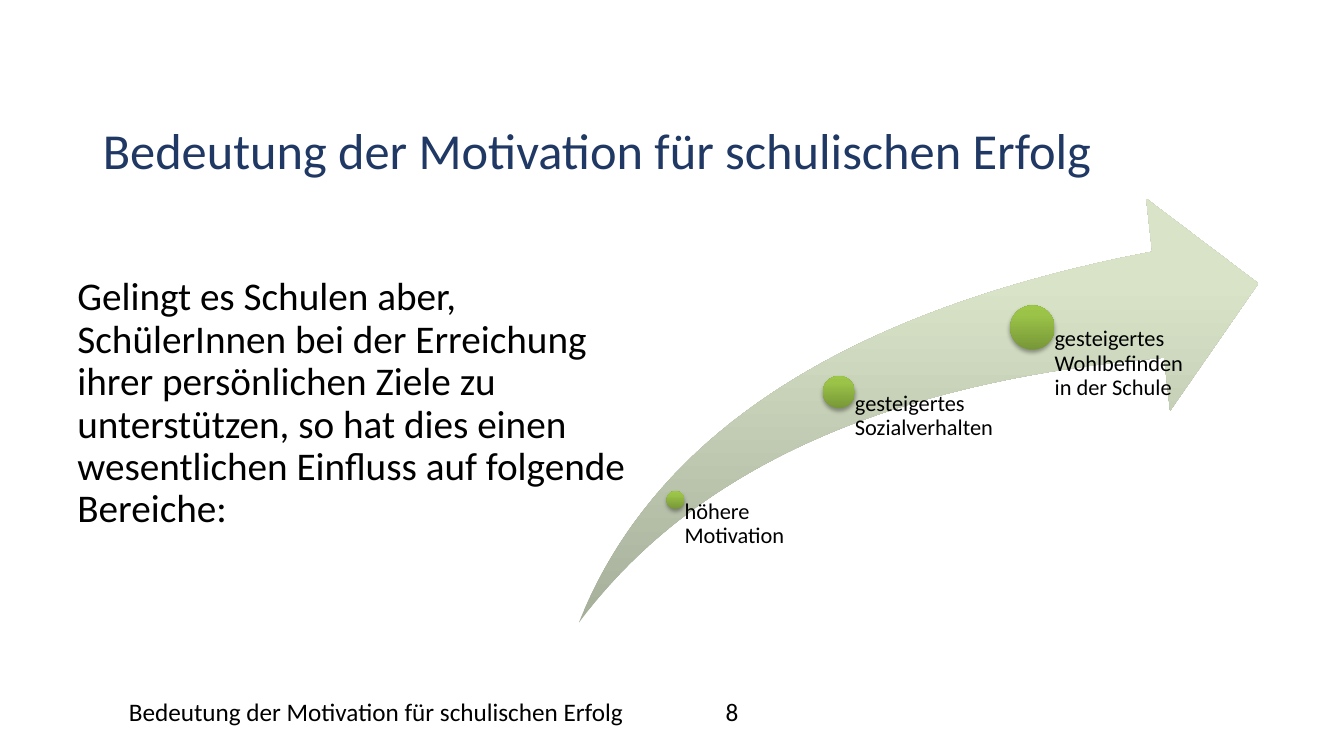
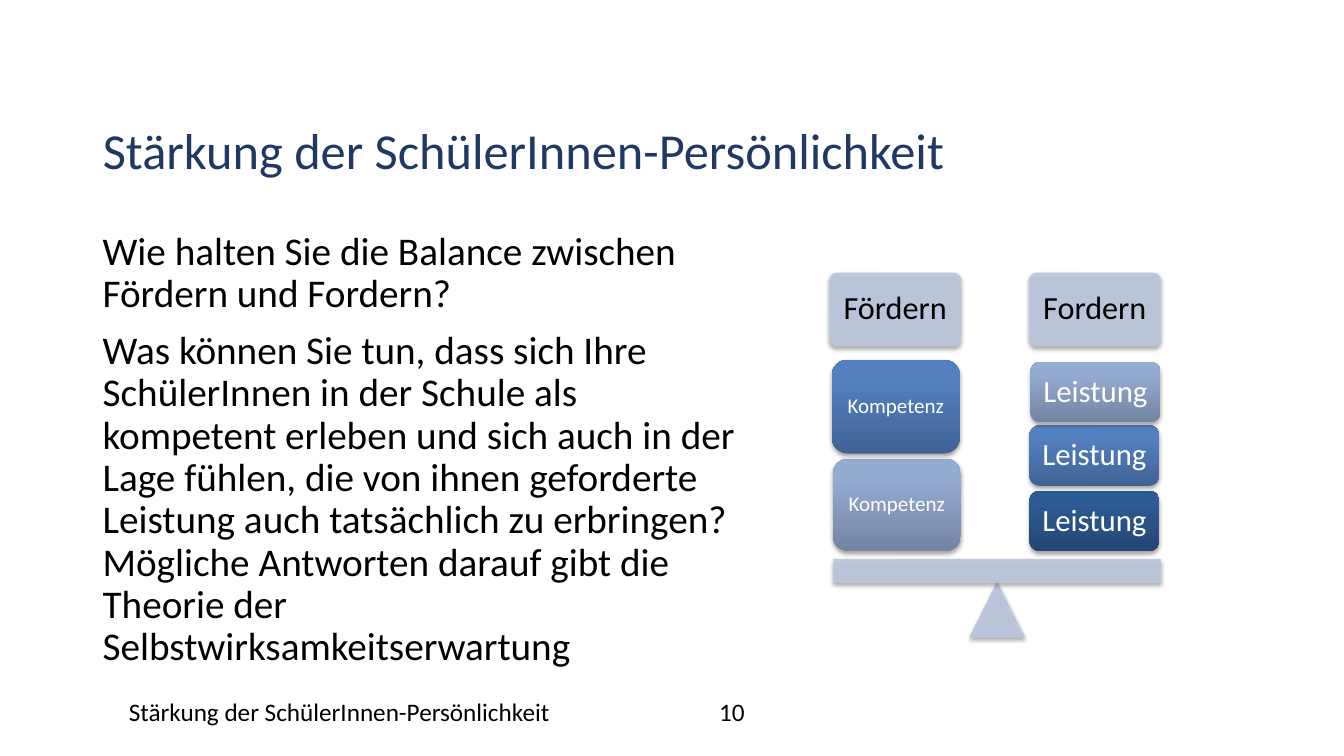
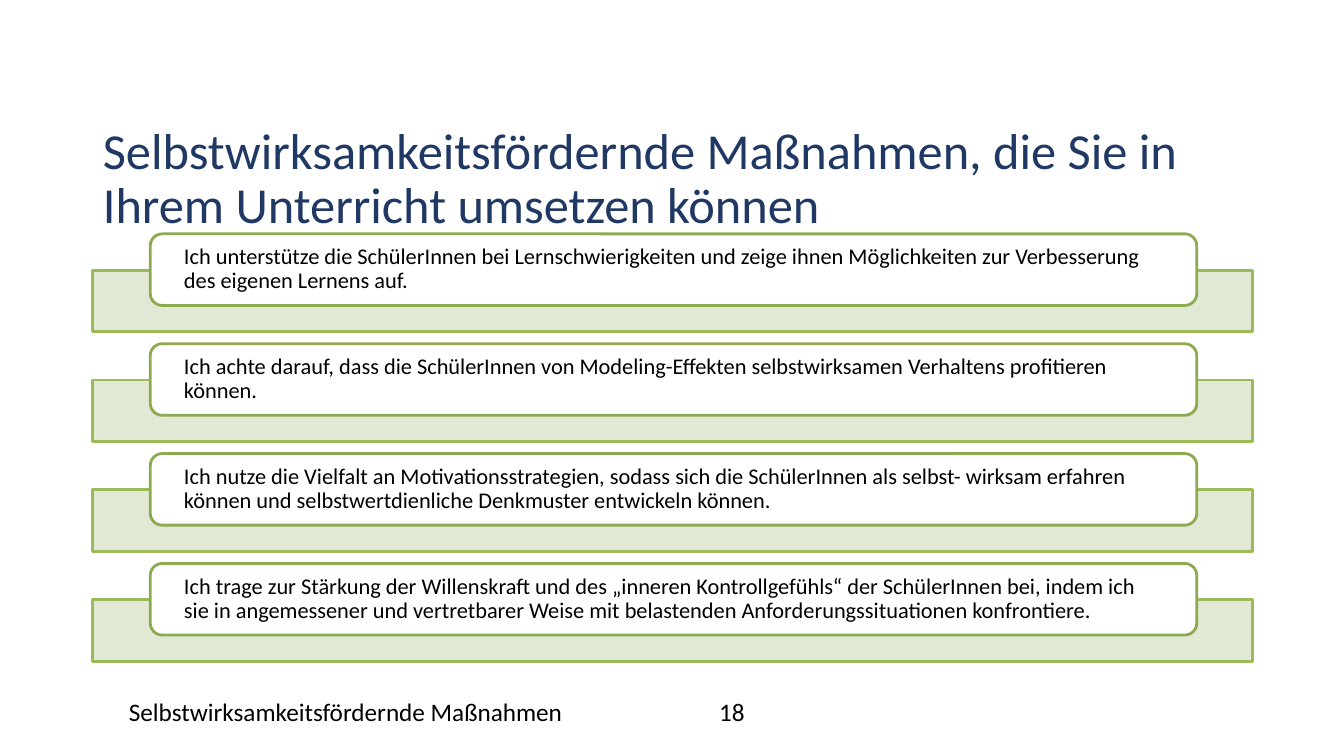
import copy
from dataclasses import dataclass
from typing import Any, Optional

import lxml.etree
import pptx
import pptx.dml.color
import pptx.enum.shapes
import pptx.enum.text
import pptx.oxml.ns
import pptx.util

Inches = pptx.util.Inches
Pt = pptx.util.Pt
KIND = pptx.enum.shapes.MSO_SHAPE
ALIGN = pptx.enum.text.PP_ALIGN
ANCHOR = pptx.enum.text.MSO_ANCHOR
qn = pptx.oxml.ns.qn

# Shared look
FONT = "Calibri"
BLACK, WHITE, NAVY = "000000", "FFFFFF", "203864"
PALE, MINT, LIME, OLIVE = "BBC7DE", "DEE7D1", "9BBB59", "8DAA51"
STOPS = (0, 0.8, 1)
SWOOSH = ("A6AF9A", "D8E3C8", "D9E4C8")
GREEN = ("779737", "9BC348", "9DC746")
DEEP = ("234671", "2D5B93", "2B5C96")
BLUE = ("406394", "5480C0", "5281C3")
STEEL = ("7284A2", "94ABD2", "94ACD4")


@dataclass
class Area:
    left: float
    top: float
    width: float
    height: float

    def emu(self) -> tuple:
        return tuple(map(Inches, (self.left, self.top, self.width, self.height)))


@dataclass
class Dot:
    x: float
    y: float
    size: float
    width: float
    text: str


@dataclass
class Block:
    area: Area
    text: str
    points: float
    paint: tuple


def tint(text: str) -> pptx.dml.color.RGBColor:
    return pptx.dml.color.RGBColor.from_string(text)


def write(frame: Any, text: str, *, size: float, color: str = BLACK,
          align: Any = ALIGN.LEFT, anchor: Any = ANCHOR.TOP,
          inset: tuple = (0.1, 0.05, 0.1, 0.05), lead: float = 0.9,
          gap: float = 0) -> None:
    """Fill a text frame, one paragraph per line of text."""
    frame.word_wrap = True
    frame.auto_size = pptx.enum.text.MSO_AUTO_SIZE.NONE
    frame.vertical_anchor = anchor
    (frame.margin_left, frame.margin_top,
     frame.margin_right, frame.margin_bottom) = map(Inches, inset)
    for i, line in enumerate(text.split("\n")):
        para = frame.add_paragraph() if i else frame.paragraphs[0]
        para.text = line
        para.alignment = align
        para.line_spacing = lead
        para.space_before = Pt(gap if i else 0)
        para.font.name = FONT
        para.font.size = Pt(size)
        para.font.color.rgb = tint(color)


def label(slide: Any, area: Area, text: str, **look: Any) -> None:
    write(slide.shapes.add_textbox(*area.emu()).text_frame, text, **look)


def fade(fill: Any, alpha: int) -> None:
    """Set the opacity of each solid colour inside an element."""
    for color in fill.iter(qn("a:srgbClr")):
        lxml.etree.SubElement(color, qn("a:alpha"), val=str(alpha * 1000))


def shade(shape: Any, paint: tuple) -> None:
    """Three-stop gradient that runs from bottom to top."""
    shape.fill.gradient()
    shape.fill.gradient_angle = 90
    stops = shape._element.spPr.find(".//" + qn("a:gsLst"))
    stops.append(copy.deepcopy(stops[-1]))
    for stop, color, spot in zip(shape.fill.gradient_stops, paint, STOPS):
        stop.color.rgb = tint(color)
        stop.position = spot


def lift(shape: Any) -> None:
    """Add a soft shadow just below the shape."""
    effects = shape._element.spPr.find(qn("a:effectLst"))
    outer = lxml.etree.SubElement(
        effects, qn("a:outerShdw"), blurRad=str(Pt(3.1)), dist=str(Pt(1.8)),
        dir="5400000", rotWithShape="0")
    lxml.etree.SubElement(outer, qn("a:srgbClr"), val=BLACK)
    fade(outer, 35)


def draw(slide: Any, kind: Any, area: Area, paint: Any, *,
         edge: Optional[str] = None, weight: float = 0.75,
         clear: bool = False, raised: bool = False) -> Any:
    """Draw a shape; clear makes its fill slightly see-through."""
    shape = slide.shapes.add_shape(kind, *area.emu())
    shape.shadow.inherit = False
    if isinstance(paint, tuple):
        shade(shape, paint)
    else:
        shape.fill.solid()
        shape.fill.fore_color.rgb = tint(paint)
        if clear:
            fade(shape._element.spPr.find(qn("a:solidFill")), 90)
    if edge:
        shape.line.color.rgb = tint(edge)
        shape.line.width = Pt(weight)
    else:
        shape.line.fill.background()
    if raised:
        lift(shape)
    return shape


def start(deck: Any, title: str, foot: str, width: float, page: int) -> Any:
    """Add a slide with its title, footer and page number."""
    slide = deck.slides.add_slide(deck.slide_layouts[5])
    head = slide.shapes.title
    head.left, head.top, head.width, head.height = Area(0.92, 1.2, 11.5, 0.97).emu()
    write(head.text_frame, title, size=36, color=NAVY)
    label(slide, Area(1.18, 6.86, width, 0.4), foot, size=18, lead=1)
    label(slide, Area(5.76, 6.86, 3, 0.4), str(page), size=18, lead=1,
          align=ALIGN.CENTER)
    return slide


def growth(deck: Any) -> None:
    title = "Bedeutung der Motivation für schulischen Erfolg"
    slide = start(deck, title, title, 5.17, 8)
    label(slide, Area(0.67, 2.7, 5.8, 2.67),
          "Gelingt es Schulen aber, SchülerInnen bei der Erreichung ihrer "
          "persönlichen Ziele zu unterstützen, so hat dies einen wesentlichen "
          "Einfluss auf folgende Bereiche:", size=28)

    # Rising arrow with a dot per stage
    arrow = Area(5.74, 1.97, 6.74, 4.21)
    swoosh = draw(slide, KIND.SWOOSH_ARROW, arrow, SWOOSH)
    swoosh.adjustments[0] = swoosh.adjustments[1] = 0.25
    floor = arrow.top + arrow.height
    for dot in (
        Dot(6.7, 4.96, 0.18, 1.57, "höhere Motivation"),
        Dot(8.32, 3.89, 0.32, 1.62, "gesteigertes Sozialverhalten"),
        Dot(10.24, 3.25, 0.44, 1.62, "gesteigertes Wohlbefinden in der Schule"),
    ):
        half = dot.size / 2
        draw(slide, KIND.OVAL,
             Area(dot.x - half, dot.y - half, dot.size, dot.size),
             GREEN, raised=True)
        label(slide, Area(dot.x, dot.y, dot.width, floor - dot.y), dot.text,
              size=16, inset=(half, 0, 0, 0))


def balance(deck: Any) -> None:
    title = "Stärkung der SchülerInnen-Persönlichkeit"
    slide = start(deck, title, title, 4.5, 10)
    label(slide, Area(0.92, 2.25, 6.7, 4.51),
          "Wie halten Sie die Balance zwischen Fördern und Fordern?\n"
          "Was können Sie tun, dass sich Ihre SchülerInnen in der Schule als "
          "kompetent erleben und sich auch in der Lage fühlen, die von ihnen "
          "geforderte Leistung auch tatsächlich zu erbringen? Mögliche "
          "Antworten darauf gibt die Theorie der Selbstwirksamkeitserwartung",
          size=28, gap=10)

    centred = dict(align=ALIGN.CENTER, anchor=ANCHOR.MIDDLE, inset=(0.05,) * 4)
    pale = dict(paint=PALE, edge=PALE, clear=True, raised=True)

    # Headings and scale
    for left, text in ((8.23, "Fördern"), (10.21, "Fordern")):
        head = draw(slide, KIND.ROUNDED_RECTANGLE, Area(left, 2.71, 1.3, 0.72), **pale)
        head.adjustments[0] = 0.1
        fade(head.line._ln, 90)
        write(head.text_frame, text, size=23, **centred)
    for kind, area in (
        (KIND.ISOSCELES_TRIANGLE, Area(9.62, 5.78, 0.54, 0.54)),
        (KIND.RECTANGLE, Area(8.27, 5.55, 3.24, 0.23)),
    ):
        fade(draw(slide, kind, area, **pale).line._ln, 90)

    # Weights on both sides
    for block in (
        Block(Area(10.21, 4.87, 1.29, 0.6), "Leistung", 22, DEEP),
        Block(Area(10.21, 4.22, 1.29, 0.6), "Leistung", 22, BLUE),
        Block(Area(10.22, 3.59, 1.29, 0.6), "Leistung", 22, STEEL),
        Block(Area(8.26, 4.55, 1.27, 0.92), "Kompetenz", 15, STEEL),
        Block(Area(8.25, 3.57, 1.27, 0.93), "Kompetenz", 15, BLUE),
    ):
        shape = draw(slide, KIND.ROUNDED_RECTANGLE, block.area, block.paint,
                     raised=True)
        write(shape.text_frame, block.text, size=block.points, color=WHITE,
              **centred)


def steps(deck: Any) -> None:
    slide = start(
        deck,
        "Selbstwirksamkeitsfördernde Maßnahmen, die Sie in Ihrem Unterricht "
        "umsetzen können",
        "Selbstwirksamkeitsfördernde Maßnahmen", 4.84, 18)
    # Each step is a card in front of a bar
    for i, text in enumerate((
        "Ich unterstütze die SchülerInnen bei Lernschwierigkeiten und zeige "
        "ihnen Möglichkeiten zur Verbesserung des eigenen Lernens auf.",
        "Ich achte darauf, dass die SchülerInnen von Modeling-Effekten "
        "selbstwirksamen Verhaltens profitieren können.",
        "Ich nutze die Vielfalt an Motivationsstrategien, sodass sich die "
        "SchülerInnen als selbst- wirksam erfahren können und "
        "selbstwertdienliche Denkmuster entwickeln können.",
        "Ich trage zur Stärkung der Willenskraft und des „inneren "
        "Kontrollgefühls“ der SchülerInnen bei, indem ich sie in angemessener "
        "und vertretbarer Weise mit belastenden Anforderungssituationen "
        "konfrontiere.",
    )):
        top = 2.32 + 1.09 * i
        draw(slide, KIND.RECTANGLE, Area(0.92, top + 0.36, 11.5, 0.61), MINT,
             edge=LIME, weight=2, clear=True)
        card = draw(slide, KIND.ROUNDED_RECTANGLE, Area(1.49, top, 10.38, 0.71),
                    WHITE, edge=OLIVE, weight=2)
        write(card.text_frame, text, size=16, anchor=ANCHOR.MIDDLE,
              inset=(0.3, 0, 0.3, 0))


def main() -> None:
    deck = pptx.Presentation()
    deck.slide_width, deck.slide_height = Inches(13.33), Inches(7.5)
    for build in (growth, balance, steps):
        build(deck)
    deck.save("out.pptx")


if __name__ == "__main__":
    main()
